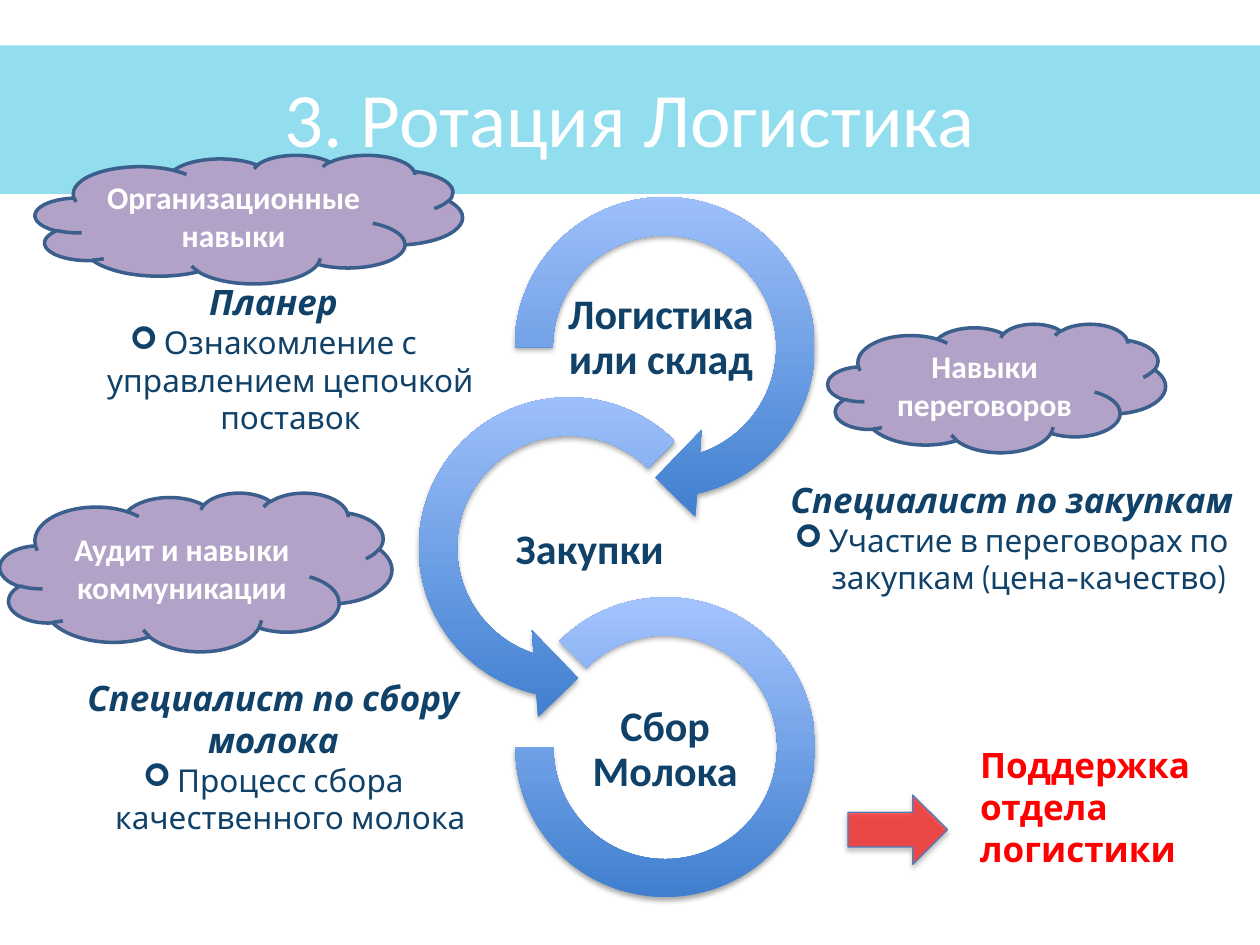
from lxml.etree import SubElement
from pptx import Presentation
from pptx.dml.color import RGBColor
from pptx.enum.shapes import MSO_SHAPE
from pptx.enum.text import MSO_ANCHOR, MSO_AUTO_SIZE, PP_ALIGN
from pptx.oxml.ns import qn
from pptx.util import Inches, Pt

COLUMNS, ROWS = 100, 75
WIDTH, HEIGHT = Inches(10), Inches(7.5)

WHITE = RGBColor(0xFF, 0xFF, 0xFF)
TURQUOISE = RGBColor(0x12, 0xB7, 0xDC)
NAVY = RGBColor(0x10, 0x41, 0x68)
RING_DARK = RGBColor(0x3F, 0x7F, 0xCE)
RING_LIGHT = RGBColor(0xA4, 0xC4, 0xFF)
LILAC = RGBColor(0xB3, 0xA2, 0xC7)
CLOUD_EDGE = RGBColor(0x3A, 0x5F, 0x8C)
RED = RGBColor(0xFF, 0x00, 0x00)
ARROW_EDGE = RGBColor(0x4B, 0x7E, 0xBC)

# Boxes are left, top, width and height in grid columns and rows.
RINGS = [
    (MSO_SHAPE.CIRCULAR_ARROW, (38.9, 13.7, 27.7, 27.7),
     (0.11, 11.42, 45, 108, 0.125)),
    (MSO_SHAPE.LEFT_CIRCULAR_ARROW, (31.3, 29.6, 27.7, 27.7),
     (0.11, 11.42, 63, 189, 0.125)),
    (MSO_SHAPE.BLOCK_ARC, (40.9, 47.4, 23.8, 23.8), (135, 108, 0.127)),
]
RING_LABELS = [
    ("Логистика или склад", (42.9, 20.2, 19.1, 13.3)),
    ("Закупки", (27.2, 39.9, 39.2, 7.7)),
    ("Сбор Молока", (45.1, 55.7, 15.4, 7.7)),
]
ROLES = [
    ("Планер", "Ознакомление с управлением цепочкой поставок",
     (2, 21.8, 39.4, 10.4)),
    ("Специалист по закупкам",
     "Участие в переговорах по закупкам (цена-качество)",
     (60.6, 37.5, 39.4, 10.4)),
    ("Специалист по сбору молока", "Процесс сбора качественного молока",
     (2, 53.2, 39.4, 13.8)),
]
CLOUDS = [
    ("Навыки переговоров", (65.7, 25.7, 26.8, 10.2)),
    ("Организационные навыки", (2.8, 12.3, 33.9, 10.2)),
    ("Аудит и навыки коммуникации", (0, 39.1, 31.1, 12.6)),
]


def grid(box):
    left, top, width, height = box
    column, row = WIDTH / COLUMNS, HEIGHT / ROWS
    return (round(left * column), round(top * row),
            round(width * column), round(height * row))


def style(paragraph, font, size, color, bold=False, italic=False,
          alignment=PP_ALIGN.CENTER):
    paragraph.alignment = alignment
    for run in paragraph.runs:
        run.font.name = font
        run.font.size = Pt(size)
        run.font.color.rgb = color
        run.font.bold = bold
        run.font.italic = italic


def set_alpha(color_element, percent):
    SubElement(color_element, qn("a:alpha")).set("val", str(percent * 1000))


def add_shape(slide, preset, box):
    shape = slide.shapes.add_shape(preset, *grid(box))
    shape.shadow.inherit = False
    return shape


def fill_solid(shape, color, opacity=100):
    shape.fill.solid()
    shape.fill.fore_color.rgb = color
    if opacity < 100:
        color_element = next(shape._element.spPr.iter(qn("a:srgbClr")))
        set_alpha(color_element, opacity)


def add_soft_shadow(shape):
    effects = shape._element.spPr.find(qn("a:effectLst"))
    shadow = SubElement(effects, qn("a:outerShdw"))
    settings = {"blurRad": Pt(3.1), "dist": Pt(1.8), "dir": 90 * 60000,
                "rotWithShape": 0}
    for name, value in settings.items():
        shadow.set(name, str(int(value)))
    color_element = SubElement(shadow, qn("a:srgbClr"))
    color_element.set("val", "000000")
    set_alpha(color_element, 35)


def add_title(slide, text):
    title = slide.shapes.title
    title.left, title.top, title.width, title.height = grid((5, 3, 90, 12.5))
    title.text_frame.text = text
    title.text_frame.vertical_anchor = MSO_ANCHOR.MIDDLE
    style(title.text_frame.paragraphs[0], "Calibri", 44, WHITE)

    band = add_shape(slide, MSO_SHAPE.RECTANGLE, (0, 3.6, COLUMNS, 11.8))
    fill_solid(band, TURQUOISE, 46)
    band.line.fill.background()
    title._element.addprevious(band._element)


def add_ring(slide, preset, box, adjustments):
    ring = add_shape(slide, preset, box)
    for index, value in enumerate(adjustments):
        ring.adjustments[index] = value
    ring.fill.gradient()
    ring.fill.gradient_angle = 90
    for stop, color in zip(ring.fill.gradient_stops, (RING_DARK, RING_LIGHT)):
        stop.color.rgb = color
    for stop, position in zip(ring.fill.gradient_stops, (0, 1)):
        stop.position = position
    ring.line.fill.background()
    add_soft_shadow(ring)


def add_text_box(slide, text, box):
    text_frame = slide.shapes.add_textbox(*grid(box)).text_frame
    text_frame.word_wrap = True
    text_frame.text = text
    return text_frame


def add_ring_label(slide, text, box):
    text_frame = add_text_box(slide, text, box)
    text_frame.vertical_anchor = MSO_ANCHOR.MIDDLE
    text_frame.margin_left = text_frame.margin_right = Inches(0.02)
    text_frame.margin_top = text_frame.margin_bottom = Inches(0.02)
    paragraph = text_frame.paragraphs[0]
    paragraph.line_spacing = 0.9
    style(paragraph, "Calibri", 24, NAVY, bold=True)


def add_bullet(paragraph, character):
    properties = paragraph._p.get_or_add_pPr()
    properties.set("marL", str(Inches(0.27)))
    properties.set("indent", str(-Inches(0.27)))
    SubElement(properties, qn("a:buFont")).set("typeface", "Wingdings")
    SubElement(properties, qn("a:buChar")).set("char", character)


def add_role(slide, role, task, box):
    text_frame = add_text_box(slide, role, box)
    text_frame.auto_size = MSO_AUTO_SIZE.SHAPE_TO_FIT_TEXT
    style(text_frame.paragraphs[0], "Cabin", 20, NAVY, bold=True, italic=True)
    paragraph = text_frame.add_paragraph()
    paragraph.text = task
    add_bullet(paragraph, "➢")
    style(paragraph, "Cabin", 18, NAVY)


def add_cloud(slide, text, box):
    cloud = add_shape(slide, MSO_SHAPE.CLOUD, box)
    fill_solid(cloud, LILAC)
    cloud.line.color.rgb = CLOUD_EDGE
    cloud.line.width = Pt(2)
    cloud.text_frame.word_wrap = True
    cloud.text_frame.text = text
    cloud.text_frame.vertical_anchor = MSO_ANCHOR.MIDDLE
    style(cloud.text_frame.paragraphs[0], "Calibri", 18, WHITE, bold=True)


def add_support_note(slide):
    arrow = add_shape(slide, MSO_SHAPE.RIGHT_ARROW, (67.3, 63.1, 7.9, 5.5))
    fill_solid(arrow, RED, 64)
    arrow.line.color.rgb = ARROW_EDGE
    arrow.line.width = Pt(0.75)
    add_soft_shadow(arrow)
    text_frame = add_text_box(slide, "Поддержка отдела логистики",
                              (76.8, 58.5, 23.2, 11.1))
    text_frame.auto_size = MSO_AUTO_SIZE.SHAPE_TO_FIT_TEXT
    style(text_frame.paragraphs[0], "Cabin", 20, RED, bold=True,
          alignment=PP_ALIGN.LEFT)


def main():
    presentation = Presentation()
    presentation.slide_width, presentation.slide_height = WIDTH, HEIGHT
    slide = presentation.slides.add_slide(presentation.slide_layouts[5])
    add_title(slide, "3. Ротация Логистика")
    for ring, label in zip(RINGS, RING_LABELS):
        add_ring(slide, *ring)
        add_ring_label(slide, *label)
    for role in ROLES:
        add_role(slide, *role)
    for cloud in CLOUDS:
        add_cloud(slide, *cloud)
    add_support_note(slide)
    presentation.save("out.pptx")


if __name__ == "__main__":
    main()
